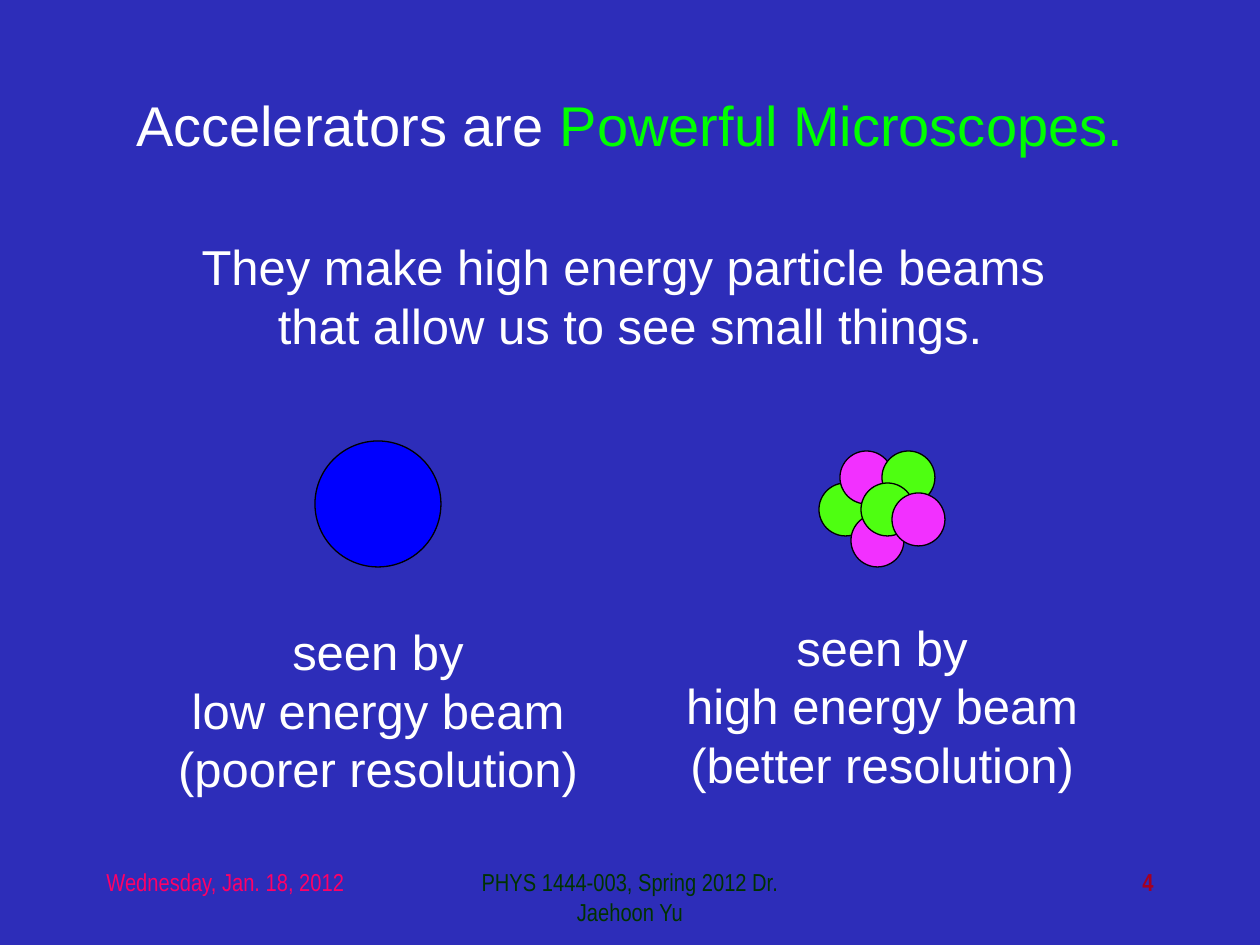
from dataclasses import dataclass

import lxml.etree
import pptx
import pptx.dml.color
import pptx.enum.shapes
import pptx.enum.text
import pptx.oxml.ns
import pptx.util

ALIGN = pptx.enum.text.PP_ALIGN
EMU_PER_PX = 914400 / 126
WHITE, BRIGHT_GREEN = "FFFFFF", "00FF00"
GREEN, MAGENTA, BLUE = "4EFF11", "F230FF", "0000FF"


@dataclass
class Box:
    left: int
    top: int
    width: int
    height: int


@dataclass
class Style:
    size: int
    font: str = "Arial"
    color: str = WHITE
    bold: bool = False
    align: ALIGN = ALIGN.CENTER


@dataclass
class Label:
    box: Box
    lines: list[str]
    style: Style


@dataclass
class Ball:
    left: int
    top: int
    diameter: int
    color: str


def px(length: int) -> pptx.util.Emu:
    return pptx.util.Emu(round(length * EMU_PER_PX))


def rgb(value: str) -> pptx.dml.color.RGBColor:
    return pptx.dml.color.RGBColor.from_string(value)


def place(shape, box: Box) -> None:
    shape.left, shape.top = px(box.left), px(box.top)
    shape.width, shape.height = px(box.width), px(box.height)


def format_run(run, style: Style) -> None:
    run.font.size = pptx.util.Pt(style.size)
    run.font.name = style.font
    run.font.bold = style.bold
    run.font.color.rgb = rgb(style.color)


def write(shape, lines: list[str], style: Style) -> None:
    frame = shape.text_frame
    frame.text = "\n".join(lines)
    frame.word_wrap = True
    frame.auto_size = pptx.enum.text.MSO_AUTO_SIZE.NONE
    frame.vertical_anchor = pptx.enum.text.MSO_ANCHOR.TOP
    for paragraph in frame.paragraphs:
        paragraph.alignment = style.align
        paragraph.space_before = pptx.util.Pt(0)
        for run in paragraph.runs:
            format_run(run, style)


def remove_bullets(shape) -> None:
    for paragraph in shape.text_frame.paragraphs:
        properties = paragraph._p.get_or_add_pPr()
        properties.set("marL", "0")
        properties.set("indent", "0")
        lxml.etree.SubElement(properties, pptx.oxml.ns.qn("a:buNone"))


def add_label(slide, label: Label) -> None:
    textbox = slide.shapes.add_textbox(0, 0, 0, 0)
    place(textbox, label.box)
    write(textbox, label.lines, label.style)


def add_ball(shapes, ball: Ball) -> None:
    circle = shapes.add_shape(
        pptx.enum.shapes.MSO_SHAPE.OVAL,
        px(ball.left), px(ball.top), px(ball.diameter), px(ball.diameter))
    circle.shadow.inherit = False
    circle.fill.solid()
    circle.fill.fore_color.rgb = rgb(ball.color)
    circle.line.color.rgb = rgb("000000")
    circle.line.width = pptx.util.Pt(0.75)


BLURRED_NUCLEUS = Ball(315, 441, 126, BLUE)
NUCLEONS = [Ball(left, top, 53, color) for left, top, color in [
    (819, 483, GREEN), (840, 451, MAGENTA), (851, 514, MAGENTA),
    (882, 451, GREEN), (861, 483, GREEN), (892, 493, MAGENTA),
]]

BEAM_LABELS = [
    Label(Box(651, 611, 462, 189),
          ["seen by", "high energy beam", "(better resolution)"], Style(28)),
    Label(Box(147, 615, 462, 189),
          ["seen by", "low energy beam", "(poorer resolution)"], Style(28)),
]

FOOTERS = [
    Label(Box(94, 861, 263, 63), ["Wednesday, Jan. 18, 2012"],
          Style(14, "Arial Narrow", "FF0066", align=ALIGN.LEFT)),
    Label(Box(430, 861, 400, 63), ["PHYS 1444-003, Spring 2012 Dr. Jaehoon Yu"],
          Style(14, "Arial Narrow", "003300")),
    Label(Box(903, 861, 263, 63), ["4"],
          Style(14, "Arial Narrow", "A50021", True, ALIGN.RIGHT)),
]


def main() -> None:
    deck = pptx.Presentation()
    deck.slide_width, deck.slide_height = px(1260), px(945)
    slide = deck.slides.add_slide(deck.slide_layouts[1])
    slide.background.fill.solid()
    slide.background.fill.fore_color.rgb = rgb("2D2DB9")

    # Title with a highlighted ending
    title = slide.shapes.title
    place(title, Box(0, 84, 1260, 80))
    write(title, ["Accelerators are "], Style(32))
    highlight = title.text_frame.paragraphs[0].add_run()
    highlight.text = "Powerful Microscopes."
    format_run(highlight, Style(32, color=BRIGHT_GREEN))

    # Statement; the space ending its first line is part of the centring
    statement = slide.placeholders[1]
    place(statement, Box(0, 230, 1260, 130))
    write(statement, ["They make high energy particle beams ",
                      "that allow us to see small things."], Style(28))
    remove_bullets(statement)

    # Nucleus at poor and at good resolution
    add_ball(slide.shapes, BLURRED_NUCLEUS)
    nucleus = slide.shapes.add_group_shape()
    for nucleon in NUCLEONS:
        add_ball(nucleus.shapes, nucleon)

    # Captions and footer
    for label in BEAM_LABELS + FOOTERS:
        add_label(slide, label)

    deck.save("out.pptx")


if __name__ == "__main__":
    main()
